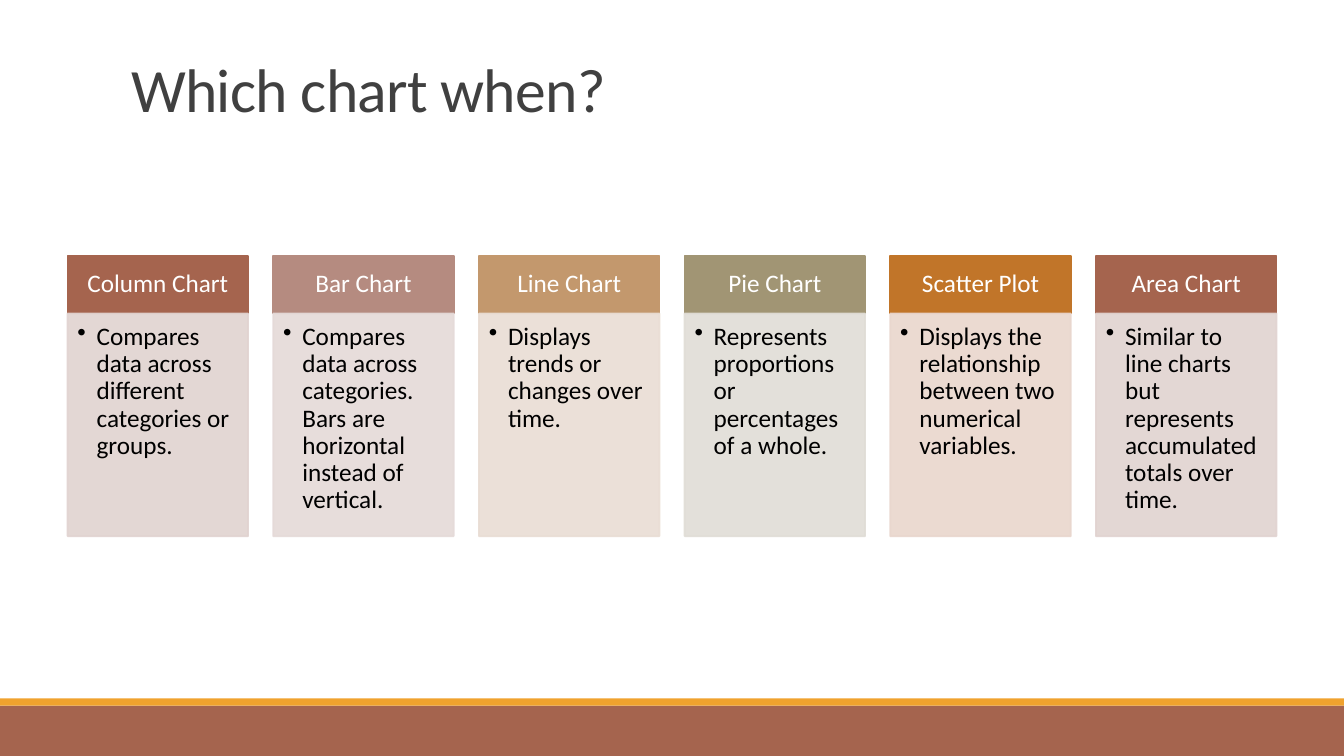
from lxml.etree import SubElement as Sub
from pptx import Presentation
from pptx.dml.color import RGBColor
from pptx.enum.shapes import MSO_SHAPE as Shape
from pptx.enum.text import MSO_ANCHOR as Anchor, PP_ALIGN as Align
from pptx.oxml.ns import qn
from pptx.util import Inches, Pt

WHITE = RGBColor(0xFF, 0xFF, 0xFF)
BLACK = RGBColor(0, 0, 0)
GREY = RGBColor(0x40, 0x40, 0x40)
RUST = RGBColor(0xA5, 0x64, 0x4E)
GOLD = RGBColor(0xF0, 0xA2, 0x2E)
ROSE = RGBColor(0xB5, 0x8B, 0x80)
TAN = RGBColor(0xC3, 0x98, 0x6D)
OLIVE = RGBColor(0xA1, 0x95, 0x74)
AMBER = RGBColor(0xC1, 0x75, 0x29)
PALE_RUST = RGBColor(0xE1, 0xD3, 0xD0)
PALE_ROSE = RGBColor(0xE5, 0xDA, 0xD8)
PALE_TAN = RGBColor(0xE9, 0xDD, 0xD4)
PALE_OLIVE = RGBColor(0xE0, 0xDD, 0xD6)
PALE_AMBER = RGBColor(0xE9, 0xD6, 0xCD)

TITLE = "Which chart when?"
CARDS = [
    ("Column Chart", "Compares data across different categories or groups.", RUST, PALE_RUST),
    ("Bar Chart", "Compares data across categories. Bars are horizontal instead of vertical.",
     ROSE, PALE_ROSE),
    ("Line Chart", "Displays trends or changes over time.", TAN, PALE_TAN),
    ("Pie Chart", "Represents proportions or percentages of a whole.", OLIVE, PALE_OLIVE),
    ("Scatter Plot", "Displays the relationship between two numerical variables.",
     AMBER, PALE_AMBER),
    ("Area Chart", "Similar to line charts but represents accumulated totals over time.",
     RUST, PALE_RUST),
]
BANDS = [(7, 0.5, RUST), (6.93, 0.07, GOLD)]

WIDE, HIGH = 13.33, 7.5
LEFT, STEP, WIDTH = 0.67, 2.04, 1.79
TOP, HEAD, BODY = 2.54, 0.57, 2.21
SIDES = ("margin_left", "margin_top", "margin_right", "margin_bottom")
HEAD_FRAME = dict(zip(SIDES, map(Inches, (0.14, 0.08, 0.14, 0.08))),
                  vertical_anchor=Anchor.MIDDLE, word_wrap=True)
BODY_FRAME = dict(zip(SIDES, map(Inches, (0.1, 0.1, 0.14, 0.16))),
                  vertical_anchor=Anchor.TOP, word_wrap=True)
HEAD_PARA = {"alignment": Align.CENTER, "line_spacing": 0.9}
BODY_PARA = {"alignment": Align.LEFT, "line_spacing": 0.9}


def apply(item, form):
    """Set each attribute in the format dict."""
    for name, value in form.items():
        setattr(item, name, value)


def write(shape, text, frame, para, size, color):
    """Put one formatted paragraph in a shape and return it."""
    apply(shape.text_frame, frame)
    line = shape.text_frame.paragraphs[0]
    apply(line, para)
    run = line.add_run()
    run.text = text
    apply(run.font, {"name": "Calibri", "size": Pt(size)})
    run.font.color.rgb = color
    return line


def box(slide, spot, color):
    """Draw a plain filled rectangle."""
    shape = slide.shapes.add_shape(Shape.RECTANGLE, *map(Inches, spot))
    shape.shadow.inherit = False
    shape.fill.solid()
    shape.fill.fore_color.rgb = color
    shape.line.fill.background()
    return shape


def edge(shape, color):
    """Outline a card part."""
    shape.line.color.rgb = color
    shape.line.width = Pt(1.25)


def fade(shape):
    """Make fill and outline slightly transparent."""
    for tint in shape.fill._xPr.iter(qn("a:srgbClr")):
        Sub(tint, qn("a:alpha"), val="90000")


def bullet(line):
    """Give a paragraph a hanging bullet."""
    props = line._p.get_or_add_pPr()
    props.set("marL", str(Inches(0.19)))
    props.set("indent", str(-Inches(0.19)))
    Sub(props, qn("a:buChar"), char="•")


def card(slide, left, name, note, dark, pale):
    """Draw a heading with its note below."""
    head = box(slide, (left, TOP, WIDTH, HEAD), dark)
    edge(head, dark)
    write(head, name, HEAD_FRAME, HEAD_PARA, 18, WHITE)
    body = box(slide, (left, TOP + HEAD, WIDTH, BODY), pale)
    edge(body, pale)
    fade(body)
    bullet(write(body, note, BODY_FRAME, BODY_PARA, 18, BLACK))


def main():
    """Build and save the slide."""
    deck = Presentation()
    apply(deck, {"slide_width": Inches(WIDE), "slide_height": Inches(HIGH)})
    slide = deck.slides.add_slide(deck.slide_layouts[5])
    for top, height, color in BANDS:
        box(slide, (0, top, WIDE, height), color)
    title = slide.shapes.title
    apply(title, {"left": Inches(1.2), "top": Inches(0.31),
                  "width": Inches(11), "height": Inches(0.98)})
    line = write(title, TITLE, {"vertical_anchor": Anchor.BOTTOM, "word_wrap": True},
                 {"alignment": Align.LEFT, "line_spacing": 0.85}, 44, GREY)
    line.runs[0].font._element.set("spc", "-50")
    for index, data in enumerate(CARDS):
        card(slide, LEFT + index * STEP, *data)
    deck.save("out.pptx")


if __name__ == "__main__":
    main()
